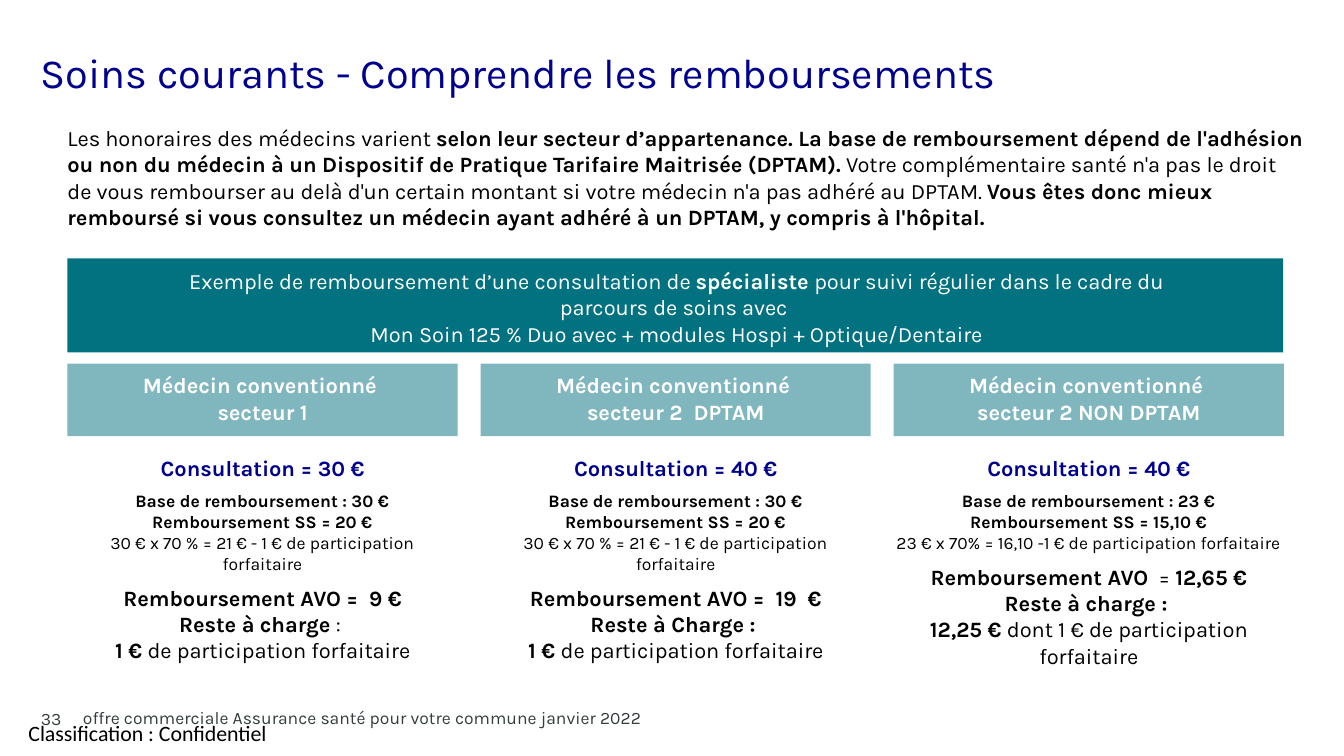
from copy import deepcopy

from lxml import etree
from pptx import Presentation
from pptx.dml.color import RGBColor
from pptx.enum import shapes, text
from pptx.oxml import ns
from pptx.util import Cm, Pt

NAVY = RGBColor(0x00, 0x00, 0x8F)
TEAL = RGBColor(0x02, 0x71, 0x80)
GREY = RGBColor(0x34, 0x3C, 0x3D)
BLACK = RGBColor(0x00, 0x00, 0x00)
WHITE = RGBColor(0xFF, 0xFF, 0xFF)

LEFT = 1.09
COLUMN_WIDTH = 6.3
COLUMN_STEP = 6.67
CENTER = text.PP_ALIGN.CENTER
TOP = text.MSO_ANCHOR.TOP
MIDDLE = text.MSO_ANCHOR.MIDDLE
BOTTOM = text.MSO_ANCHOR.BOTTOM
DEFAULT_MARGINS = (0.25, 0.13, 0.25, 0.13)
HEADER_MARGINS = (0.25, 0.13, 0.25, 0.18)
NO_MARGINS = (0, 0, 0, 0)

INTRODUCTION = [
    ("Les honoraires des médecins varient ", False),
    ("selon leur secteur d’appartenance. La base de remboursement dépend de "
     "l'adhésion ou non du médecin à un Dispositif de Pratique Tarifaire "
     "Maitrisée (DPTAM). ", True),
    ("Votre complémentaire santé n'a pas le droit de vous rembourser au delà "
     "d'un certain montant si votre médecin n'a pas adhéré au DPTAM. ", False),
    ("Vous êtes donc mieux remboursé si vous consultez un médecin ayant adhéré "
     "à un DPTAM, y compris à l'hôpital.", True),
]
EXAMPLE = [
    ("Exemple de remboursement d’une consultation de ", False),
    ("spécialiste ", True),
    ("pour suivi régulier dans le cadre du parcours de soins avec ", False),
]
SECTORS = [
    ("secteur 1", 6.3, "30 €", "30 €", "20 €",
     "30 € x 70 % = 21 € - 1 € de participation forfaitaire",
     [("Remboursement AVO =  9 €\nReste à charge ", True), (": \n", False),
      ("1 € ", True), ("de participation forfaitaire", False)]),
    ("secteur 2  DPTAM", 6.3, "40 €", "30 €", "20 €",
     "30 € x 70 % = 21 € - 1 € de participation forfaitaire",
     [("Remboursement AVO =  19  €\nReste à Charge : \n1 € ", True),
      ("de participation forfaitaire", False)]),
    ("secteur 2 NON DPTAM", 6.86, "40 €", "23 €", "15,10 €",
     "23 € x 70% = 16,10 -1 € de participation forfaitaire",
     [("Remboursement AVO ", True), (" = ", False),
      ("12,65 €\nReste à charge : \n12,25 € ", True),
      ("dont 1 € de participation forfaitaire", False)]),
]


def prepare_frame(shape, margins, anchor):
    frame = shape.text_frame
    frame.word_wrap = True
    frame.vertical_anchor = anchor
    (frame.margin_left, frame.margin_top,
     frame.margin_right, frame.margin_bottom) = map(Cm, margins)
    return frame


def add_text(slide, left, top, width, height, margins=NO_MARGINS, anchor=TOP):
    shape = slide.shapes.add_textbox(Cm(left), Cm(top), Cm(width), Cm(height))
    return prepare_frame(shape, margins, anchor)


def add_band(slide, left, top, width, height, margins, anchor, opacity=None):
    shape = slide.shapes.add_shape(shapes.MSO_SHAPE.RECTANGLE,
                                   Cm(left), Cm(top), Cm(width), Cm(height))
    shape.shadow.inherit = False
    shape.line.fill.background()
    shape.fill.solid()
    shape.fill.fore_color.rgb = TEAL
    if opacity:
        color = shape.element.spPr.find(".//" + ns.qn("a:srgbClr"))
        etree.SubElement(color, ns.qn("a:alpha"), val=str(opacity * 1000))
    return prepare_frame(shape, margins, anchor)


def write_paragraph(frame, runs, size=10, color=BLACK, align=None, before=0,
                    font="Karla"):
    paragraph = frame.paragraphs[0]
    if paragraph.runs:
        paragraph = frame.add_paragraph()
    paragraph.alignment = align
    if before:
        paragraph.space_before = Pt(before)
    for content, bold in runs:
        for number, line in enumerate(content.split("\n")):
            if number:
                paragraph.add_line_break()
                paragraph._p[-1].append(deepcopy(run.font._element))
            if line:
                run = paragraph.add_run()
                run.text = line
                run.font.name = font
                run.font.size = Pt(size)
                run.font.bold = bold
                run.font.color.rgb = color


def add_sector(slide, index, name, width, price, base, refund, detail, result):
    left = LEFT + index * COLUMN_STEP
    header = add_band(slide, left, 5.87, COLUMN_WIDTH, 1.17, HEADER_MARGINS,
                      MIDDLE, opacity=50)
    for line in ("Médecin conventionné ", name):
        write_paragraph(header, [(line, True)], color=WHITE, align=CENTER)

    body = add_text(slide, left - (width - COLUMN_WIDTH) / 2, 7.21, width, 3.38,
                    DEFAULT_MARGINS)
    write_paragraph(body, [(f"Consultation = {price}", True)],
                    color=NAVY, align=CENTER)
    write_paragraph(body, [
        (f"Base de remboursement : {base}\nRemboursement SS = {refund}\n", True),
        (detail, False),
    ], size=8, align=CENTER, before=4)
    write_paragraph(body, result, align=CENTER, before=5)


def add_footer(slide):
    number = add_text(slide, 0.66, 11.35, 0.61, 0.41, anchor=BOTTOM)
    write_paragraph(number, [("33", False)], size=8, color=GREY)
    classification = add_text(slide, 0.46, 11.62, 4.4, 0.43)
    write_paragraph(classification, [("Classification : Confidentiel", False)],
                    font="Calibri")
    offer = add_text(slide, LEFT, 11.28, 9.55, 0.66, DEFAULT_MARGINS)
    write_paragraph(offer, [("offre commerciale Assurance santé pour votre "
                             "commune janvier 2022", False)], size=8, color=GREY)


def main():
    presentation = Presentation()
    presentation.slide_width = Cm(21.7)
    presentation.slide_height = Cm(12.2)
    slide = presentation.slides.add_slide(presentation.slide_layouts[6])

    title = add_text(slide, 0.66, 0.76, 20.4, 0.79)
    write_paragraph(title, [("Soins courants - Comprendre les remboursements",
                             False)], size=19, color=NAVY)
    introduction = add_text(slide, LEFT, 2.01, 19.96, 1.7, anchor=BOTTOM)
    write_paragraph(introduction, INTRODUCTION)

    banner = add_band(slide, LEFT, 4.17, 19.63, 1.52, (1.22, 0.15, 1.19, 0), TOP)
    write_paragraph(banner, EXAMPLE, color=WHITE, align=CENTER)
    write_paragraph(banner, [("Mon Soin 125 % Duo avec + modules Hospi + "
                              "Optique/Dentaire", False)],
                    color=WHITE, align=CENTER)

    for index, sector in enumerate(SECTORS):
        add_sector(slide, index, *sector)
    add_footer(slide)
    presentation.save("out.pptx")


if __name__ == "__main__":
    main()
